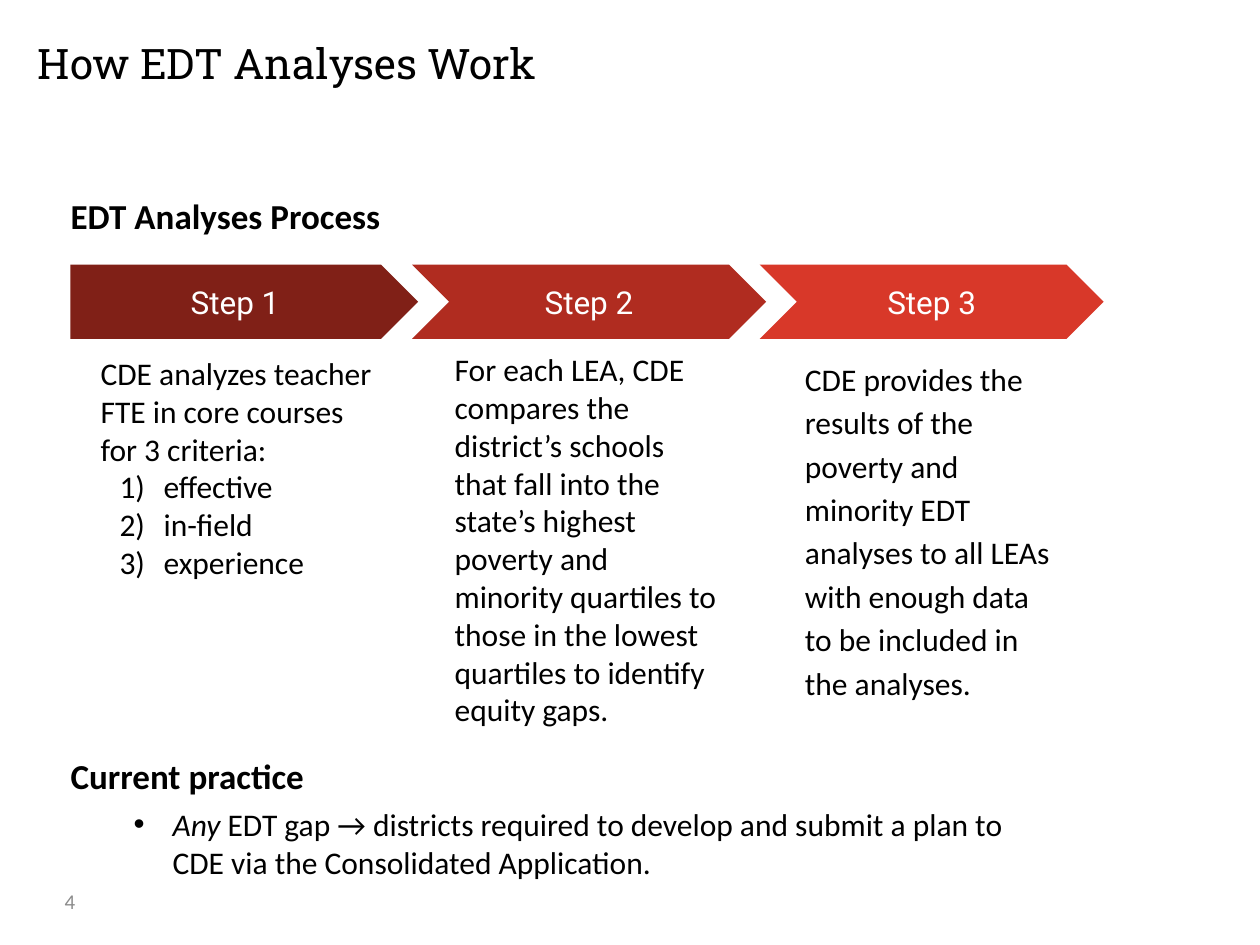
"""Build a slide showing the three steps of the EDT analyses."""
from dataclasses import dataclass

from lxml import etree
from pptx import Presentation
from pptx.dml.color import RGBColor
from pptx.enum.shapes import MSO_SHAPE
from pptx.enum.text import MSO_ANCHOR, MSO_AUTO_SIZE, PP_ALIGN
from pptx.oxml.ns import qn
from pptx.slide import Slide
from pptx.util import Inches, Pt

PENTAGON, CHEVRON = MSO_SHAPE.PENTAGON, MSO_SHAPE.CHEVRON
TOP, MIDDLE = MSO_ANCHOR.TOP, MSO_ANCHOR.MIDDLE
LEFT, CENTER = PP_ALIGN.LEFT, PP_ALIGN.CENTER
NO_FIT = MSO_AUTO_SIZE.NONE
BLACK = RGBColor(0x00, 0x00, 0x00)
WHITE = RGBColor(0xFF, 0xFF, 0xFF)
GRAY = RGBColor(0x8C, 0x8C, 0x8C)
DARK_RED = RGBColor(0x80, 0x20, 0x17)
MID_RED = RGBColor(0xB0, 0x2C, 0x20)
BRIGHT_RED = RGBColor(0xD8, 0x38, 0x29)

COLUMNS, ROWS = 100, 75
ARROW_ROW, ARROW_HEIGHT = 21, 5.9
STEPS = [
    ("Step 1", PENTAGON, DARK_RED, (5.6, 27.6), (7, 27.1, 23.5, 19.4), 1,
     "CDE analyzes teacher FTE in core courses for 3 criteria:",
     ["effective", "in-field", "experience"]),
    ("Step 2", CHEVRON, MID_RED, (32.7, 28.1), (35.1, 26.8, 23.2, 29.3), 1,
     "For each LEA, CDE compares the district’s schools that fall into the "
     "state’s highest poverty and minority quartiles to those in the lowest "
     "quartiles to identify equity gaps.", []),
    ("Step 3", CHEVRON, BRIGHT_RED, (60.3, 27.3), (62.9, 27.1, 22, 29.3), 1.15,
     "CDE provides the results of the poverty and minority EDT analyses to all "
     "LEAs with enough data to be included in the analyses.", []),
]


@dataclass
class SlideBuilder:
    """Hold the style and the current slide."""
    presentation: Presentation
    slide: Slide
    text_font: str = "Calibri"
    title_font: str = "Roboto Slab"
    step_font: str = "Roboto"
    text_size: int = 18

    def box(self, column, row, width, height):
        """Turn grid cells into lengths."""
        across = self.presentation.slide_width / COLUMNS
        down = self.presentation.slide_height / ROWS
        return [int(n) for n in (column * across, row * down, width * across, height * down)]

    def frame(self, shape, inset=0.0, anchor=TOP):
        """Prepare the text frame of a shape."""
        frame = shape.text_frame
        frame.word_wrap, frame.auto_size = True, NO_FIT
        frame.vertical_anchor = anchor
        frame.margin_left = frame.margin_right = Inches(inset)
        frame.margin_top = frame.margin_bottom = Inches(inset)
        return frame

    def place(self, shape, *cells):
        """Move a placeholder and return its text frame."""
        shape.left, shape.top, shape.width, shape.height = self.box(*cells)
        return self.frame(shape)

    def indent(self, paragraph, left, hanging, tag="a:buNone", **attributes):
        """Set the indents and the list mark of a paragraph."""
        properties = paragraph._p.get_or_add_pPr()
        properties.set("marL", str(Inches(left)))
        properties.set("indent", str(-Inches(hanging)))
        etree.SubElement(properties, qn(tag), attributes)

    def format(self, paragraph, font=None, size=None, color=BLACK, bold=False,
               align=LEFT, before=0):
        """Format the runs and spacing of a paragraph."""
        paragraph.alignment = align
        paragraph.space_before = Pt(before)
        for run in paragraph.runs:
            run.font.name = font or self.text_font
            run.font.size = Pt(size or self.text_size)
            run.font.bold = bold
            run.font.color.rgb = color

    def title(self, text):
        """Fill the title placeholder."""
        frame = self.place(self.slide.shapes.title, 3, 3, 86.2, 7.8)
        frame.text = text
        self.format(frame.paragraphs[0], self.title_font, 24)

    def body(self, headings, gap, emphasis, rest):
        """Fill the body placeholder with two headings and a bullet."""
        frame = self.place(self.slide.placeholders[1], 5.6, 15.4, 78, 55.2)
        frame.text = "\n".join(headings)
        for paragraph, before in zip(frame.paragraphs, (0, gap)):
            self.indent(paragraph, 0, 0)
            self.format(paragraph, size=20, bold=True, before=before)
        bullet = frame.add_paragraph()
        bullet.level = 1
        self.indent(bullet, 0.81, 0.31, "a:buChar", char="•")
        for text, italic in ((emphasis, True), (rest, False)):
            run = bullet.add_run()
            run.text = text
            run.font.italic = italic
        self.format(bullet, before=5)

    def step(self, label, kind, color, span, cells, spacing, text, criteria):
        """Draw one arrow with its description as a group."""
        shapes = self.slide.shapes.add_group_shape().shapes
        column, width = span
        arrow = shapes.add_shape(kind, *self.box(column, ARROW_ROW, width, ARROW_HEIGHT))
        arrow.shadow.inherit = False
        arrow.fill.solid()
        arrow.fill.fore_color.rgb = color
        arrow.line.fill.background()
        frame = self.frame(arrow, 0.1, MIDDLE)
        frame.text = label
        self.format(frame.paragraphs[0], self.step_font, color=WHITE, align=CENTER)

        frame = self.frame(shapes.add_textbox(*self.box(*cells)), 0.1)
        frame.text = "\n".join([text, *criteria])
        for paragraph in frame.paragraphs[1:]:
            self.indent(paragraph, 0.5, 0.35, "a:buAutoNum", type="arabicParenR")
        for paragraph in frame.paragraphs:
            paragraph.line_spacing = spacing
            self.format(paragraph)

    def page_number(self, text):
        """Write the page number."""
        shape = self.slide.shapes.add_textbox(*self.box(3, 69.5, 5.1, 4))
        frame = self.frame(shape, 0.05, MIDDLE)
        frame.text = text
        self.format(frame.paragraphs[0], size=12, color=GRAY, align=CENTER)


def main():
    """Build and save the slide."""
    presentation = Presentation()
    presentation.slide_width, presentation.slide_height = Inches(10), Inches(7.5)
    slide = presentation.slides.add_slide(presentation.slide_layouts[1])
    builder = SlideBuilder(presentation, slide)
    builder.title("How EDT Analyses Work")
    builder.body(["EDT Analyses Process", "Current practice"], 296, "Any",
                 " EDT gap → districts required to develop and submit a plan to "
                 "CDE via the Consolidated Application.")
    builder.page_number("4")
    for step in STEPS:
        builder.step(*step)
    presentation.save("out.pptx")


if __name__ == "__main__":
    main()
